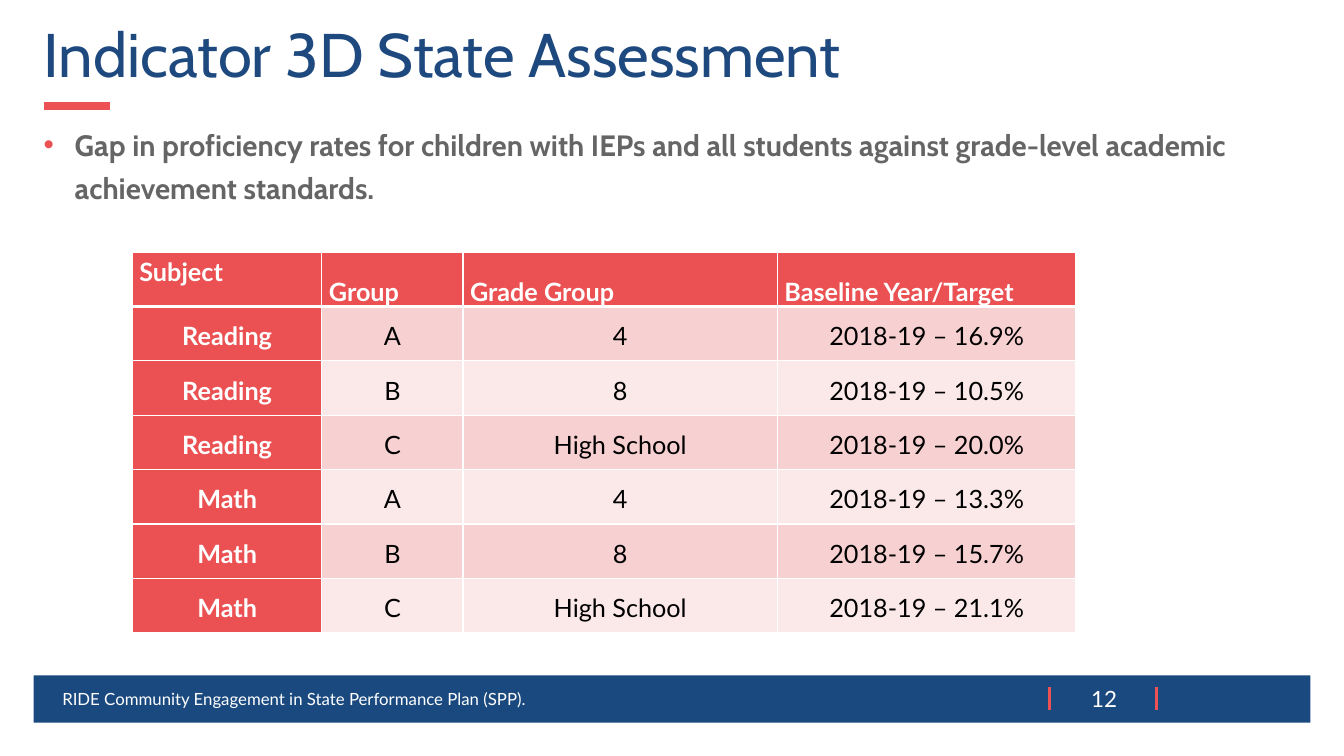
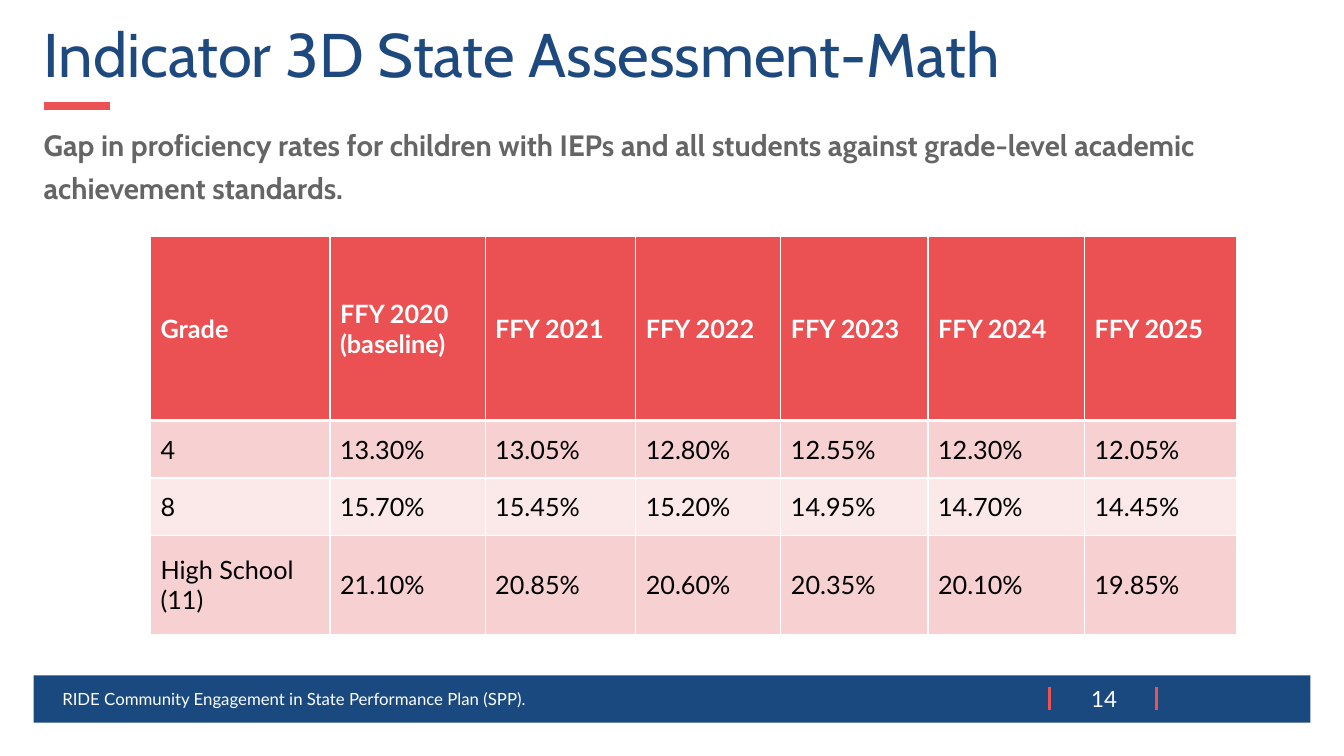
from lxml.etree import SubElement
from pptx import Presentation
from pptx.dml.color import RGBColor
from pptx.enum.shapes import MSO_CONNECTOR, MSO_SHAPE
from pptx.enum.text import MSO_ANCHOR as Anchor, MSO_AUTO_SIZE, PP_ALIGN as Align
from pptx.oxml.ns import qn
from pptx.util import Inches, Pt

COLORS = {
    "title": "1E497F", "band": "1A497F", "rule": "EC5153", "accent": "EB5152",
    "body": "656565", "white": "FFFFFF", "black": "000000",
    "row_dark": "F7D0D1", "row_light": "FBE9E9",
}
FOOTER = "RIDE Community Engagement in State Performance Plan (SPP)."
SUMMARY = ("Gap in proficiency rates for children with IEPs and all students "
           "against grade-level academic achievement standards.")

# All positions and sizes are percentages of the slide's width and height.
SLIDES = [
    {
        "title": "Indicator 3D State Assessment", "number": "12", "bullet": True,
        "left": 9.85, "top": 33.33,
        "columns": [14.1, 10.5, 23.4, 22.2], "heights": [7.2] * 7,
        "header_column": True, "margins": (0.07, 0), "spacing": 1.15,
        "header_anchors": [Anchor.TOP] + [Anchor.BOTTOM] * 3, "align": Align.CENTER,
        "rows": [
            ["Subject", "Group", "Grade Group", "Baseline Year/Target"],
            ["Reading", "A", "4", "2018-19 – 16.9%"],
            ["Reading", "B", "8", "2018-19 – 10.5%"],
            ["Reading", "C", "High School", "2018-19 – 20.0%"],
            ["Math", "A", "4", "2018-19 – 13.3%"],
            ["Math", "B", "8", "2018-19 – 15.7%"],
            ["Math", "C", "High School", "2018-19 – 21.1%"],
        ],
    },
    {
        "title": "Indicator 3D State Assessment-Math", "number": "14", "bullet": False,
        "left": 11.2, "top": 31.33,
        "columns": [13.35, 11.55, 11.2, 10.8, 10.95, 11.65, 11.3],
        "heights": [24.3, 7.6, 7.6, 13.07],
        "header_column": False, "margins": (0.1, 0.05), "spacing": 1.0,
        "header_anchors": [Anchor.MIDDLE] * 7, "align": Align.LEFT,
        "rows": [
            ["Grade", "FFY 2020\n(baseline)", "FFY 2021", "FFY 2022", "FFY 2023",
             "FFY 2024", "FFY 2025"],
            ["4", "13.30%", "13.05%", "12.80%", "12.55%", "12.30%", "12.05%"],
            ["8", "15.70%", "15.45%", "15.20%", "14.95%", "14.70%", "14.45%"],
            ["High School (11)", "21.10%", "20.85%", "20.60%", "20.35%", "20.10%",
             "19.85%"],
        ],
    },
]

presentation = Presentation()
presentation.slide_width = Inches(13.33)
presentation.slide_height = Inches(7.5)


def area(*percents):
    """Turn alternating horizontal and vertical percentages into lengths."""
    sides = (presentation.slide_width, presentation.slide_height)
    return [round(sides[i % 2] * percent / 100) for i, percent in enumerate(percents)]


def write(frame, text, font, size, color, bold=False, align=Align.LEFT, spacing=1.0):
    """Fill a text frame and format every paragraph and run alike."""
    frame.text = text
    frame.word_wrap = True
    for paragraph in frame.paragraphs:
        paragraph.alignment = align
        paragraph.line_spacing = spacing
        for run in paragraph.runs:
            run.font.name = font
            run.font.size = Pt(size)
            run.font.bold = bold
            run.font.color.rgb = RGBColor.from_string(COLORS[color])


for content in SLIDES:
    slide = presentation.slides.add_slide(presentation.slide_layouts[5])
    shapes = slide.shapes

    # Band and accent lines
    band = shapes.add_shape(MSO_SHAPE.RECTANGLE, *area(2.5, 89.33, 95, 6.27))
    band.shadow.inherit = False
    band.fill.solid()
    band.fill.fore_color.rgb = RGBColor.from_string(COLORS["band"])
    band.line.fill.background()
    for ends, width in [((3.25, 14, 8.2, 14), 6),
                        ((78.1, 90.93, 78.1, 93.87), 2.25),
                        ((86.05, 90.93, 86.05, 93.87), 2.25)]:
        line = shapes.add_connector(MSO_CONNECTOR.STRAIGHT, *area(*ends))
        line.line.width = Pt(width)
        line.line.color.rgb = RGBColor.from_string(COLORS["rule"])
        SubElement(line.element.spPr, qn("a:effectLst"))

    # Title, footer and summary
    title = shapes.title
    title.left, title.top, title.width, title.height = area(2.5, 2.5, 95, 10.27)
    write(title.text_frame, content["title"], "Cabin", 44, "title", spacing=0.9)
    title.text_frame.vertical_anchor = Anchor.MIDDLE
    title.text_frame.auto_size = MSO_AUTO_SIZE.NONE

    for text, place, size, align in [
            (FOOTER, (3.9, 89.73, 63.5, 5.33), 12, Align.LEFT),
            (content["number"], (79.75, 90, 4.8, 4.93), 16, Align.CENTER)]:
        label = shapes.add_textbox(*area(*place))
        write(label.text_frame, text, "Lato", size, "white", align=align)
        label.text_frame.vertical_anchor = Anchor.MIDDLE

    summary = shapes.add_textbox(*area(2.5, 15.07, 95, 12.4))
    write(summary.text_frame, SUMMARY, "Cabin", 21, "body", bold=True, spacing=1.23)
    if content["bullet"]:
        properties = summary.text_frame.paragraphs[0]._p.get_or_add_pPr()
        properties.set("marL", str(Inches(0.31)))
        properties.set("indent", str(-Inches(0.31)))
        bullet_color = SubElement(properties, qn("a:buClr"))
        SubElement(bullet_color, qn("a:srgbClr"), val=COLORS["accent"])
        SubElement(properties, qn("a:buFont"), typeface="Arial")
        SubElement(properties, qn("a:buChar"), char="•")

    # Table
    rows, columns, heights = content["rows"], content["columns"], content["heights"]
    place = area(content["left"], content["top"], sum(columns), sum(heights))
    table = shapes.add_table(len(rows), len(columns), *place).table
    table.first_col = content["header_column"]
    for column, percent in zip(table.columns, columns):
        column.width = area(percent)[0]
    for row, percent in zip(table.rows, heights):
        row.height = area(0, percent)[1]

    for r, texts in enumerate(rows):
        for c, text in enumerate(texts):
            cell = table.cell(r, c)
            is_header = r == 0 or (c == 0 and content["header_column"])
            write(cell.text_frame, text, "Lato", 18, "white" if is_header else "black",
                  bold=is_header, align=content["align"] if r else Align.LEFT,
                  spacing=content["spacing"])
            cell.vertical_anchor = Anchor.MIDDLE if r else content["header_anchors"][c]
            side, end = content["margins"]
            cell.margin_left = cell.margin_right = Inches(side)
            cell.margin_top = cell.margin_bottom = Inches(end)

            borders = {"lnL": 1, "lnR": 1, "lnT": 3 if r == 1 else 1,
                       "lnB": 3 if r == 0 else 1}
            for edge, width in borders.items():
                border = SubElement(cell._tc.get_or_add_tcPr(), qn(f"a:{edge}"),
                                    w=str(Pt(width)))
                fill = SubElement(border, qn("a:solidFill"))
                SubElement(fill, qn("a:srgbClr"), val=COLORS["white"])
            cell.fill.solid()
            shade = "accent" if is_header else "row_dark" if r % 2 else "row_light"
            cell.fill.fore_color.rgb = RGBColor.from_string(COLORS[shade])

presentation.save("out.pptx")
